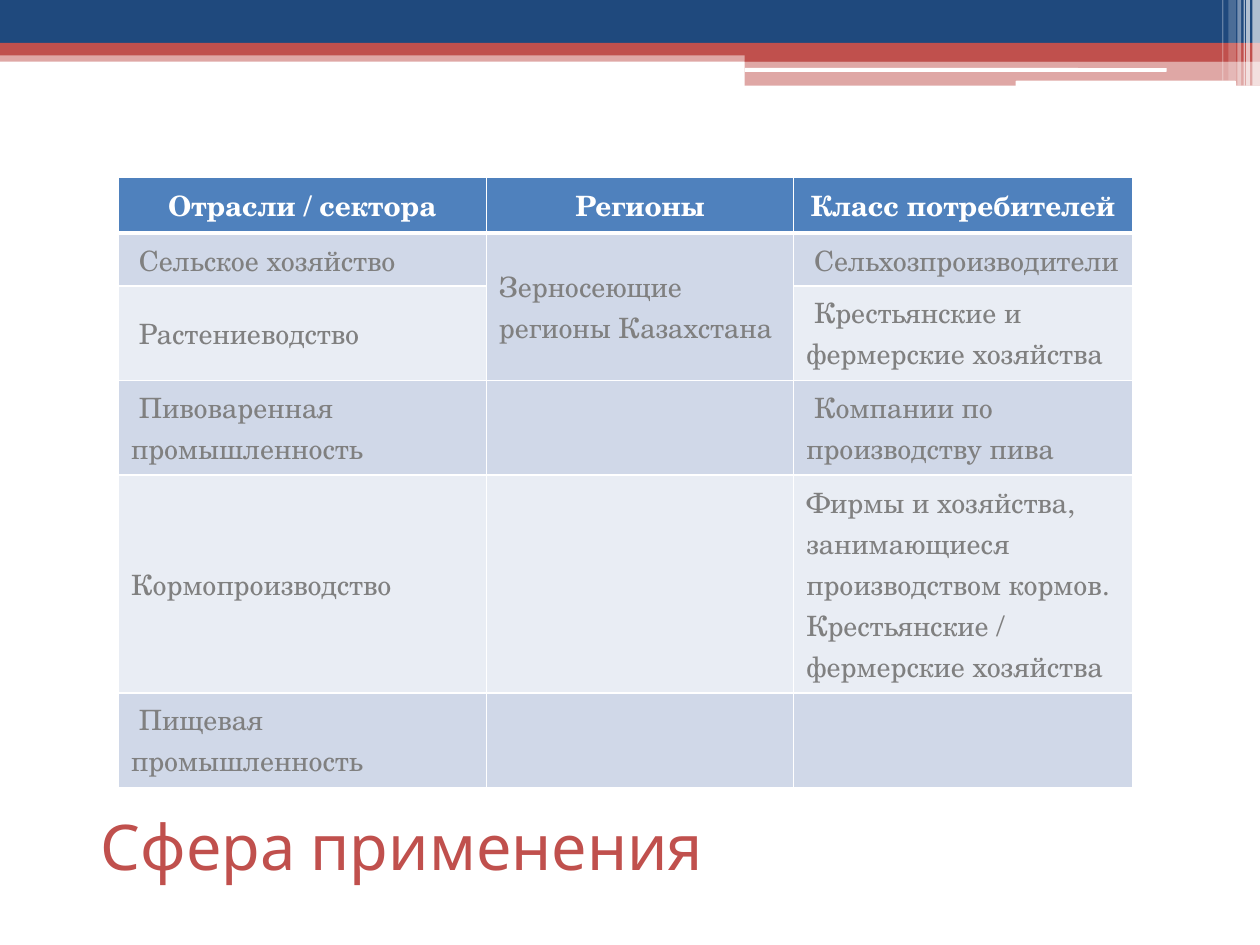
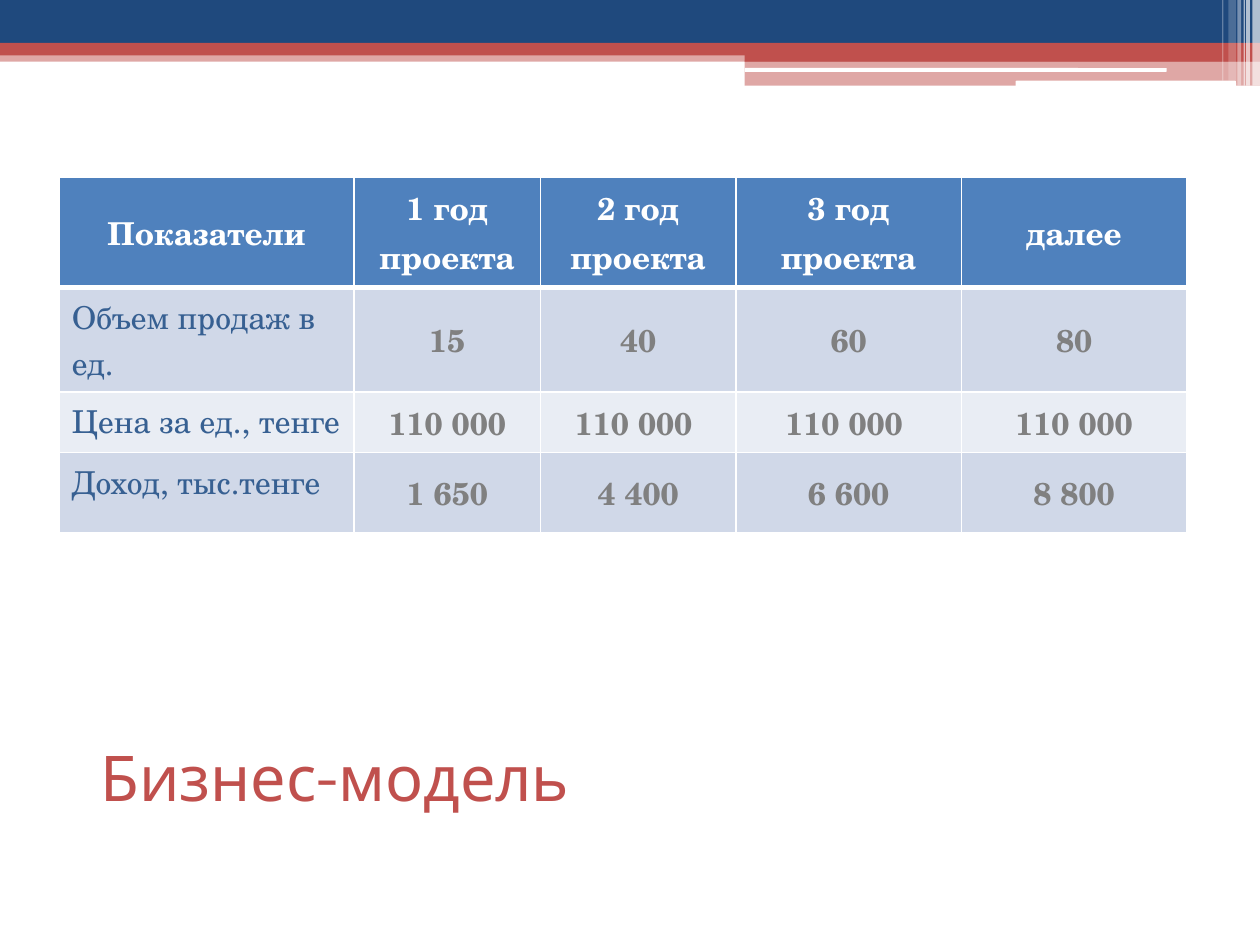
from dataclasses import dataclass

from lxml.etree import SubElement
from pptx import Presentation
from pptx.dml.color import RGBColor as Rgb
from pptx.enum.shapes import MSO_SHAPE as Shape
from pptx.enum.text import MSO_ANCHOR as Anchor, PP_ALIGN as Align
from pptx.oxml.ns import qn
from pptx.util import Inches, Pt


@dataclass(frozen=True)
class Theme:
    navy: str = "1F497D"
    red: str = "C0504D"
    white: str = "FFFFFF"
    header: str = "4F81BD"
    stripes: tuple = ("D0D8E8", "E9EDF4")
    grey: str = "808080"
    label: str = "376092"
    title_font: str = "Karla"
    table_font: str = "TeX Gyre Schola"
    title_size: int = 36
    thin: int = 1
    thick: int = 3


THEME = Theme()
WIDTH, HEIGHT = 10, 7.5
TABLE_TOP = 1.41
TITLE_LEFT, TITLE_WIDTH, TITLE_HEIGHT = 0.7, 8.95, 0.76

# Slide content; None continues the cell above
SLIDES = [
    {
        "title": "Сфера применения", "title_top": 6.33,
        "left": 0.94, "size": 16,
        "columns": [2.92, 2.44, 2.69],
        "heights": [0.44, 0.42, 0.75, 0.75, 1.73, 0.75],
        "label_column": False,
        "rows": [
            ["Отрасли / сектора", "Регионы", "Класс потребителей"],
            [" Сельское хозяйство", "Зерносеющие регионы Казахстана",
             " Сельхозпроизводители"],
            [" Растениеводство", None, " Крестьянские и фермерские хозяйства"],
            [" Пивоваренная промышленность", "", " Компании по производству пива"],
            ["Кормопроизводство", "",
             "Фирмы и хозяйства, занимающиеся производством кормов.\n"
             "Крестьянские / фермерские хозяйства"],
            [" Пищевая промышленность", "", ""],
        ],
    },
    {
        "title": "Бизнес-модель", "title_top": 5.78,
        "left": 0.47, "size": 18,
        "columns": [2.34, 1.48, 1.55, 1.79, 1.79],
        "heights": [0.87, 0.83, 0.48, 0.64],
        "label_column": True,
        "rows": [
            ["Показатели", "1 год проекта", "2 год проекта", "3 год проекта", "далее"],
            ["Объем продаж в ед.", "15", "40", "60", "80"],
            ["Цена за ед., тенге", "110 000", "110 000 ", "110 000 ", "110 000"],
            ["Доход, тыс.тенге", "1 650", "4 400", "6 600", "8 800"],
        ],
    },
]

# Top bands: left, top, width, height, colour, opacity in percent
SPLIT = 5.91
BANDS = [
    (0, 0.4, WIDTH, 0.09, THEME.red, 50),
    (0, 0, WIDTH, 0.34, THEME.navy, 100),
    (0, 0.34, WIDTH, 0.1, THEME.red, 100),
    (SPLIT, 0.39, WIDTH - SPLIT, 0.1, THEME.red, 100),
    (SPLIT, 0.48, WIDTH - SPLIT, 0.2, THEME.red, 50),
]
# White rounded rules: left, top, width, height
RULES = [(SPLIT, 0.54, 3.35, 0.03), (8.06, 0.64, 1.75, 0.05)]
# White vertical strips hanging from the top: left, width, height, opacity
STRIPS = [
    (9.94, 0.06, 0.68, 65), (9.89, 0.03, 0.68, 65), (9.87, 0.01, 0.68, 60),
    (9.82, 0.03, 0.68, 40), (9.75, 0.06, 0.64, 20), (9.7, 0.01, 0.64, 30),
]


def apply(target, values):
    for name, value in values.items():
        setattr(target, name, value)


def add_bar(page, left, top, width, height, colour, opacity=100, kind=Shape.RECTANGLE):
    bar = page.shapes.add_shape(kind, *map(Inches, (left, top, width, height)))
    bar.shadow.inherit = False
    bar.line.fill.background()
    bar.fill.solid()
    bar.fill.fore_color.rgb = Rgb.from_string(colour)
    if opacity < 100:
        tint = bar.fill._xPr.find(qn("a:solidFill"))[0]
        SubElement(tint, qn("a:alpha"), val=str(opacity * 1000))


def add_header_art(page):
    for band in BANDS:
        add_bar(page, *band)
    for rule in RULES:
        add_bar(page, *rule, THEME.white, kind=Shape.ROUNDED_RECTANGLE)
    for left, width, height, opacity in STRIPS:
        add_bar(page, left, 0, width, height, THEME.white, opacity)


def write(frame, text, font, colour, align=Align.LEFT):
    frame.word_wrap = True
    for number, line in enumerate(text.split("\n")):
        para = frame.add_paragraph() if number else frame.paragraphs[0]
        para.alignment = align
        span = para.add_run()
        span.text = line
        apply(span.font, font)
        span.font.color.rgb = Rgb.from_string(colour)


def add_title(page, text, top):
    box = page.shapes.add_textbox(
        *map(Inches, (TITLE_LEFT, top, TITLE_WIDTH, TITLE_HEIGHT)))
    box.text_frame.vertical_anchor = Anchor.MIDDLE
    write(box.text_frame, text,
          {"name": THEME.title_font, "size": Pt(THEME.title_size)}, THEME.red)


def add_borders(cell, row):
    widths = {"L": THEME.thin, "R": THEME.thin,
              "T": THEME.thick if row == 1 else THEME.thin,
              "B": THEME.thick if row == 0 else THEME.thin}
    props = cell._tc.get_or_add_tcPr()
    for side, width in widths.items():
        line = SubElement(props, qn(f"a:ln{side}"), w=str(Pt(width)))
        SubElement(SubElement(line, qn("a:solidFill")), qn("a:srgbClr"), val=THEME.white)


def cell_style(row, column, label_column):
    """Return text colour, boldness, alignment and anchor for a cell."""
    if row == 0:
        return THEME.white, True, Align.CENTER, Anchor.MIDDLE
    if not label_column:
        return THEME.grey, False, Align.LEFT, Anchor.MIDDLE
    if column == 0:
        return THEME.label, False, Align.LEFT, Anchor.TOP
    return THEME.grey, True, Align.CENTER, Anchor.MIDDLE


def add_table(page, content):
    columns, heights, rows = content["columns"], content["heights"], content["rows"]
    table = page.shapes.add_table(
        len(rows), len(columns),
        *map(Inches, (content["left"], TABLE_TOP, sum(columns), sum(heights)))).table
    for column, width in zip(table.columns, columns):
        column.width = Inches(width)
    for row, height in zip(table.rows, heights):
        row.height = Inches(height)

    for r, texts in enumerate(rows):
        for c, text in enumerate(texts):
            cell = table.cell(r, c)
            add_borders(cell, r)
            cell.fill.solid()
            shade = THEME.stripes[(r - 1) % 2] if r else THEME.header
            cell.fill.fore_color.rgb = Rgb.from_string(shade)
            if text is None:
                table.cell(r - 1, c).merge(cell)
            elif text:
                colour, bold, align, anchor = cell_style(r, c, content["label_column"])
                cell.vertical_anchor = anchor
                font = {"name": THEME.table_font, "size": Pt(content["size"]), "bold": bold}
                write(cell.text_frame, text, font, colour, align)


def main():
    deck = Presentation()
    apply(deck, {"slide_width": Inches(WIDTH), "slide_height": Inches(HEIGHT)})
    blank = deck.slide_layouts[6]
    for content in SLIDES:
        page = deck.slides.add_slide(blank)
        add_header_art(page)
        add_title(page, content["title"], content["title_top"])
        add_table(page, content)
    deck.save("out.pptx")


if __name__ == "__main__":
    main()
